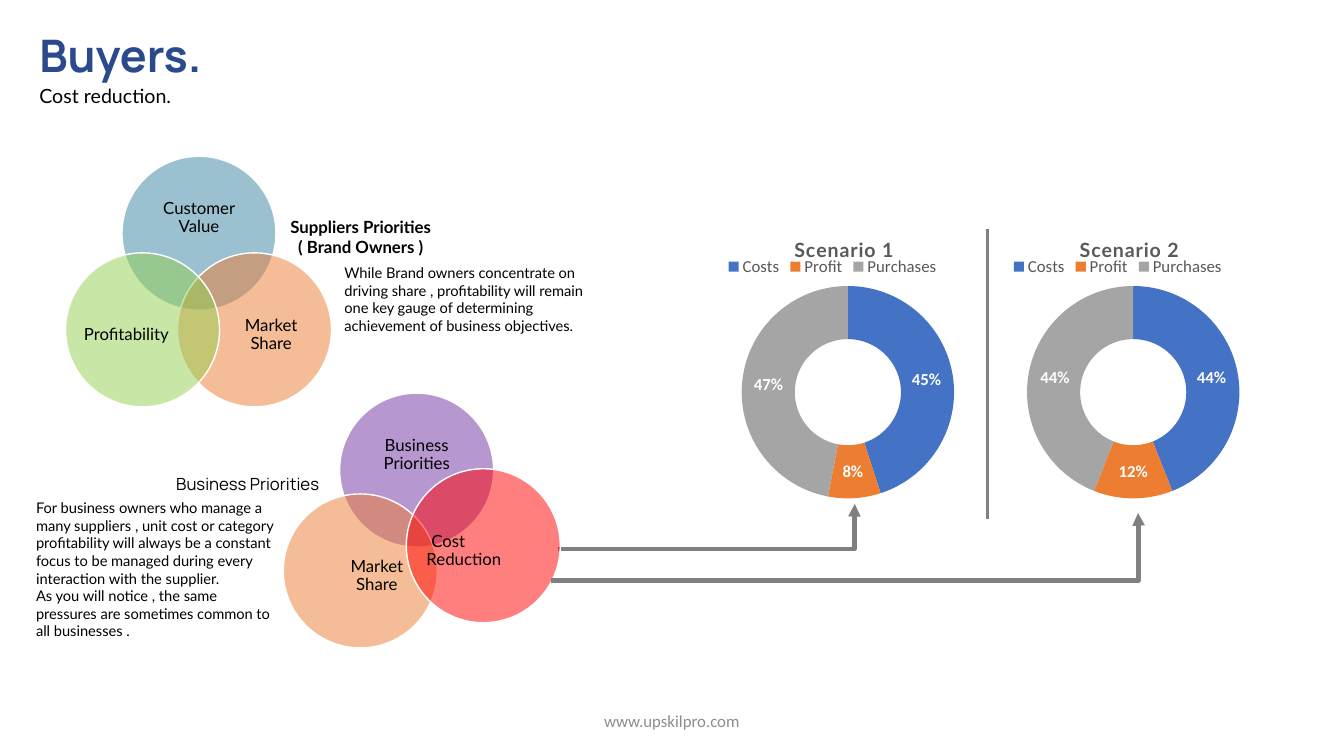
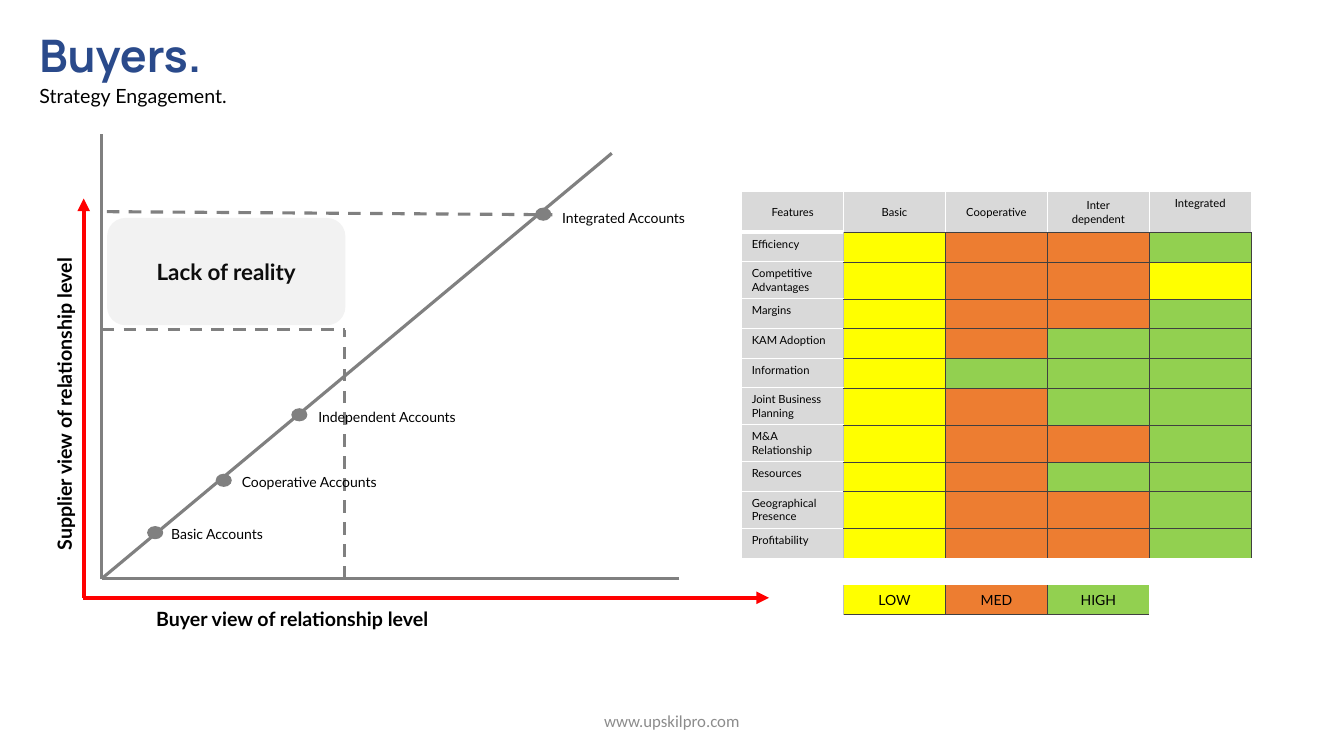
from lxml import etree
from pptx import Presentation
from pptx.chart.data import CategoryChartData
from pptx.dml.color import RGBColor
from pptx.enum import chart as charts, dml, shapes, text
from pptx.oxml.ns import qn
from pptx.util import Pt

NAVY, BLACK, GRAY, RED = "2A4A8B", "000000", "808080", "FF0000"
BLUE, ORANGE, SILVER, SLATE = "4472C4", "ED7D31", "A5A5A5", "595959"
WHITE, YELLOW, GREEN = "FFFFFF", "FFFF00", "92D050"
PALE, EDGE, DARK = "D9D9D9", "BFBFBF", "404040"
LATO, MANROPE, CALIBRI = "Lato", "Manrope", "Calibri"
LEFT, CENTER = text.PP_ALIGN.LEFT, text.PP_ALIGN.CENTER
TOP, MIDDLE = text.MSO_ANCHOR.TOP, text.MSO_ANCHOR.MIDDLE

LEVELS = {"L": YELLOW, "M": ORANGE, "H": GREEN}
FEATURES = [
    ("Efficiency", "LMMH"),
    ("Competitive Advantages", "LMML"),
    ("Margins", "LMMH"),
    ("KAM Adoption", "LMHH"),
    ("Information", "LHHH"),
    ("Joint Business Planning", "LMHH"),
    ("M&A Relationship", "LMMH"),
    ("Resources", "LMHH"),
    ("Geographical Presence", "LMMH"),
    ("Profitability", "LMMH"),
]


def color(value):
    return RGBColor.from_string(value)


def points(*values):
    return [Pt(value) for value in values]


def style_font(font, size, name=LATO, shade=BLACK, bold=False):
    font.size = Pt(size)
    font.name = name
    font.bold = bold
    font.color.rgb = color(shade)


def write(frame, wording, size, align=LEFT, **look):
    frame.text = wording
    for para in frame.paragraphs:
        para.alignment = align
        for span in para.runs:
            style_font(span.font, size, **look)


def add_text(page, box, wording, size, align=LEFT, anchor=TOP, inset=None, **look):
    label = page.shapes.add_textbox(*points(*box))
    frame = label.text_frame
    frame.word_wrap = True
    frame.vertical_anchor = anchor
    if inset is not None:
        frame.margin_left = frame.margin_right = Pt(inset)
        frame.margin_top = frame.margin_bottom = Pt(inset)
    write(frame, wording, size, align, **look)
    return label


def add_shape(page, kind, box, fill, outline=None, alpha=None):
    shape = page.shapes.add_shape(kind, *points(*box))
    shape.shadow.inherit = False
    shape.fill.solid()
    shape.fill.fore_color.rgb = color(fill)
    if alpha:
        tint = shape.fill._xPr.find(".//" + qn("a:srgbClr"))
        etree.SubElement(tint, qn("a:alpha"), val=str(alpha * 1000))
    if outline:
        shape.line.color.rgb = color(outline)
        shape.line.width = Pt(1)
    else:
        shape.line.fill.background()
    return shape


def add_line(page, start, end, shade=GRAY, width=2.25, dashed=False, arrow=False, bend=None):
    kind = shapes.MSO_CONNECTOR.ELBOW if bend else shapes.MSO_CONNECTOR.STRAIGHT
    line = page.shapes.add_connector(kind, *points(*start, *end))
    line.line.color.rgb = color(shade)
    line.line.width = Pt(width)
    if dashed:
        line.line.dash_style = dml.MSO_LINE.DASH
    properties = line._element.spPr
    if arrow:
        etree.SubElement(properties.find(qn("a:ln")), qn("a:tailEnd"), type="triangle")
    if bend:
        guides = properties.find(".//" + qn("a:avLst"))
        etree.SubElement(guides, qn("a:gd"), name="adj1", fmla=f"val {bend}")
    etree.SubElement(properties, qn("a:effectLst"))


def add_page(deck, subtitle):
    page = deck.slides.add_slide(deck.slide_layouts[6])
    heading = add_text(page, (21, 16.5, 505, 63.5), "Buyers.\n" + subtitle, 14)
    title, tagline = heading.text_frame.paragraphs
    style_font(title.runs[0].font, 32, MANROPE, NAVY, True)
    tagline.line_spacing = 1.07
    add_text(page, (318, 500.5, 324, 28.8), "www.upskilpro.com", 12, CENTER, MIDDLE,
             name=CALIBRI, shade="8C8C8C")
    return page


def add_venn(page, left, top, circles):
    label_boxes = {"top": (14.4, 19.4, 81.4, 49.7),
                   "right": (33.8, 28.5, 66.2, 60.5),
                   "left": (10.4, 28.8, 66.2, 60.5)}
    labels = []
    for wording, side, dx, dy, fill in circles:
        x, y = left + dx, top + dy
        add_shape(page, shapes.MSO_SHAPE.OVAL, (x, y, 110, 110), fill, WHITE, 50)
        inner_x, inner_y, width, height = label_boxes[side]
        label = add_text(page, (x + inner_x, y + inner_y, width, height), wording, 12,
                         CENTER, MIDDLE, 0)
        label.text_frame.paragraphs[0].line_spacing = 0.9
        labels.append(label)
    return labels


def set_layout(element, index, **values):
    for old in element.findall(qn("c:layout")):
        element.remove(old)
    layout = etree.Element(qn("c:layout"))
    manual = etree.SubElement(layout, qn("c:manualLayout"))
    if "w" in values:
        etree.SubElement(manual, qn("c:layoutTarget"), val="inner")
    for tag in ("xMode", "yMode"):
        etree.SubElement(manual, qn("c:" + tag), val="edge")
    for tag, value in values.items():
        etree.SubElement(manual, qn("c:" + tag), val=str(value))
    element.insert(index, layout)


def add_scenario(page, box, title, values):
    data = CategoryChartData()
    data.categories = ["Costs", "Profit", "Purchases"]
    data.add_series("Series 1", values)
    frame = page.shapes.add_chart(charts.XL_CHART_TYPE.DOUGHNUT, *points(*box), data)
    chart = frame.chart
    style_font(chart.font, 10, CALIBRI)

    chart.has_title = True
    write(chart.chart_title.text_frame, title, 14, CENTER, shade=SLATE, bold=True)
    span = chart.chart_title.text_frame.paragraphs[0].runs[0]
    span.font._element.set("spc", "50")
    set_layout(chart.chart_title._element, 1, x=0.35, y=0.06)

    chart.has_legend = True
    chart.legend.position = charts.XL_LEGEND_POSITION.TOP
    chart.legend.include_in_layout = False
    style_font(chart.legend.font, 12, CALIBRI, SLATE)
    set_layout(chart.legend._element, 1, x=0.15, y=0.13)

    plot = chart.plots[0]
    plot.vary_by_categories = True
    for index, fill in enumerate((BLUE, ORANGE, SILVER)):
        slice_fill = plot.series[0].points[index].format.fill
        slice_fill.solid()
        slice_fill.fore_color.rgb = color(fill)
    plot.has_data_labels = True
    labels = plot.data_labels
    labels.show_percentage = True
    labels.show_value = False
    style_font(labels.font, 12, CALIBRI, WHITE, True)
    plot_area = chart._chartSpace.find(".//" + qn("c:plotArea"))
    set_layout(plot_area, 0, x=0.205, y=0.239, w=0.627, h=0.693)


def add_scenarios(page, left, top):
    scenarios = [("Scenario 1", (45, 8, 47)), ("Scenario 2", (44, 12, 44))]
    for index, (title, values) in enumerate(scenarios):
        add_scenario(page, (left + index * 203.8, top, 242, 219), title, values)
    add_line(page, (left + 225.4, top + 11.5), (left + 225.4, top + 219))


def add_accounts(page, left, top):
    def at(x, y):
        return left + x, top + y

    corner = at(0, 317.5)
    add_line(page, at(0, 0), corner)
    add_line(page, at(412.6, 317.5), corner)
    add_line(page, at(0, 139.7), at(173.5, 139.7), dashed=True)
    add_line(page, at(173.5, 317.5), at(173.5, 139.7), dashed=True)
    add_line(page, at(364.3, 13.7), corner)
    add_line(page, at(3.6, 55.4), at(321.8, 57.6), dashed=True)
    accounts = [
        ("Basic Accounts", 32.4, 280, 10.1, -4.3),
        ("Independent Accounts", 135.4, 195.8, 12.2, -3.6),
        ("Cooperative Accounts", 81.4, 242.6, 11.5, -3.6),
        ("Integrated Accounts", 309.6, 52.5, 12.2, -2.2),
    ]
    for wording, x, y, dx, dy in accounts:
        add_shape(page, shapes.MSO_SHAPE.FLOWCHART_CONNECTOR, (*at(x, y), 11.5, 9.4), GRAY)
        add_text(page, (*at(x + dx, y + dy), 123, 19.4), wording, 10)
    gap = add_shape(page, shapes.MSO_SHAPE.ROUNDED_RECTANGLE, (*at(4.3, 60.4), 169.2, 75.6),
                    "F2F2F2", "F2F2F2")
    gap.text_frame.vertical_anchor = MIDDLE
    write(gap.text_frame, "Lack of reality", 16, CENTER, shade="0D0D0D", bold=True)

    add_line(page, at(-12.9, 331.2), at(-12.9, 46), RED, 3, arrow=True)
    add_line(page, at(-13.6, 331.2), at(476.6, 331.2), RED, 3, arrow=True)
    add_text(page, (*at(31.7, 334), 262, 24.5), "Buyer view of relationship level", 14, bold=True)
    side = add_text(page, (*at(-157.7, 161.2), 262, 24.5),
                    "Supplier view of relationship level", 14, bold=True)
    side.rotation = 270


def set_borders(cell, borders):
    properties = cell._tc.get_or_add_tcPr()
    for index, (side, border) in enumerate(zip("LRTB", borders)):
        line = etree.Element(qn("a:ln" + side))
        if border:
            shade, width = border
            line.set("w", str(Pt(width)))
            fill = etree.SubElement(line, qn("a:solidFill"))
            etree.SubElement(fill, qn("a:srgbClr"), val=shade)
        else:
            line.set("w", "0")
            etree.SubElement(line, qn("a:noFill"))
        properties.insert(index, line)


def fill_cell(cell, wording, fill, borders, size=8, align=CENTER, anchor=MIDDLE):
    cell.fill.solid()
    cell.fill.fore_color.rgb = color(fill)
    cell.vertical_anchor = anchor
    if wording:
        write(cell.text_frame, wording, size, align)
    else:
        etree.SubElement(cell.text_frame.paragraphs[0]._p, qn("a:endParaRPr"), sz="800")
    set_borders(cell, borders)


def add_feature_table(page, left, top):
    heights = [28.9] + [26.4 if len(name) > 13 else 21.2 for name, _ in FEATURES] + [19.3, 21.2]
    frame = page.shapes.add_table(len(heights), 5, *points(left, top, 364, sum(heights)))
    table = frame.table
    table.first_row = table.horz_banding = False
    for column in table.columns:
        column.width = Pt(72.8)
    for row, height in zip(table.rows, heights):
        row.height = Pt(height)

    white, edge, dark = (WHITE, 1), (EDGE, 0.25), (DARK, 0.25)
    headers = ["Features", "Basic", "Cooperative", "Inter\ndependent", "Integrated"]
    for column, wording in enumerate(headers):
        below = dark if column else (WHITE, 3)
        fill_cell(table.cell(0, column), wording, PALE, (white, white, white, below),
                  anchor=TOP if column == 4 else MIDDLE)
    for row, (name, ratings) in enumerate(FEATURES, 1):
        last = row == len(FEATURES)
        above = white if row > 1 else (WHITE, 3)
        fill_cell(table.cell(row, 0), name, PALE,
                  (white, edge, above, None if last else white), align=LEFT, anchor=TOP)
        for column, rating in enumerate(ratings, 1):
            fill_cell(table.cell(row, column), "", LEVELS[rating],
                      (dark if column > 1 else edge, dark, dark, None if last else dark))

    gap_row = len(FEATURES) + 1
    for column in range(5):
        fill_cell(table.cell(gap_row, column), "", WHITE, (None,) * 4)
    legend = [("", WHITE, (white, edge, None, white)),
              ("LOW", YELLOW, (edge, dark, None, dark)),
              ("MED", ORANGE, (dark, dark, None, dark)),
              ("HIGH", GREEN, (dark, None, None, dark)),
              ("", WHITE, (None,) * 4)]
    for column, (wording, fill, borders) in enumerate(legend):
        fill_cell(table.cell(gap_row + 1, column), wording, fill, borders, 10)


def build_cost_page(deck):
    page = add_page(deck, "Cost reduction.")
    add_line(page, (398.9, 392.4), (610.6, 360), width=3, arrow=True, bend=99900)
    add_scenarios(page, 480.2, 152)
    add_venn(page, 46.8, 111.6, [
        ("Customer Value", "top", 40.3, 0, "3984A3"),
        ("Market Share", "right", 80, 69, ORANGE),
        ("Profitability", "left", 0, 69, GREEN),
    ])
    add_text(page, (176.4, 151.2, 162.7, 36), "Suppliers Priorities\n( Brand Owners )", 12,
             CENTER, bold=True)
    labels = add_venn(page, 202.3, 280.8, [
        ("Business Priorities", "top", 40.3, 0, "7030A0"),
        ("Market Share", "right", 0, 72, ORANGE),
        ("Cost Reduction", "left", 87.9, 54, RED),
    ])
    cost = labels[-1].text_frame.paragraphs[0]
    cost.alignment = LEFT
    indents = cost._p.get_or_add_pPr()
    indents.set("marL", str(Pt(4)))
    indents.set("indent", str(Pt(3.5)))
    add_text(page, (118.8, 334.8, 234, 21.6), "Business Priorities", 12, name=MANROPE)
    add_line(page, (393.8, 414.7), (812.9, 366.5), width=3, arrow=True, bend=100100)
    add_text(page, (239, 185, 189.4, 58.3),
             "While Brand owners concentrate on driving share , profitability will remain one key "
             "gauge of determining achievement of business objectives.", 10.5)
    add_text(page, (18.7, 352.8, 189.4, 108.7),
             "For business owners who manage a many suppliers , unit cost or category profitability "
             "will always be a constant focus to be managed during every interaction with the "
             "supplier.\nAs you will notice , the same pressures are sometimes common to all "
             "businesses .", 10.5)


def build_strategy_page(deck):
    page = add_page(deck, "Strategy Engagement.")
    add_feature_table(page, 529.8, 137)
    add_accounts(page, 72.7, 95.8)


def main():
    deck = Presentation()
    deck.slide_width, deck.slide_height = points(960, 540)
    build_cost_page(deck)
    build_strategy_page(deck)
    deck.save("out.pptx")


if __name__ == "__main__":
    main()
